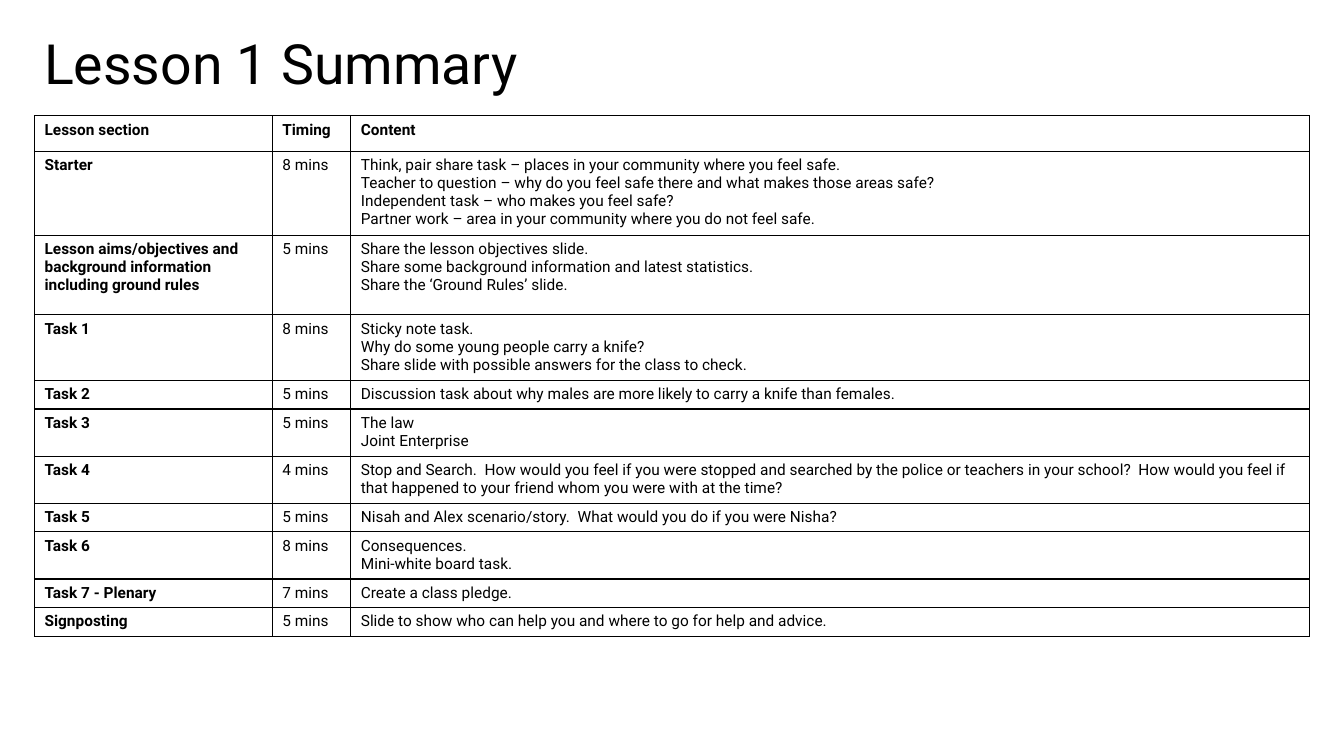
import pptx
import pptx.dml.color
import pptx.enum.text
import pptx.oxml
import pptx.oxml.ns
import pptx.util
from pptx.util import Cm

BLACK = pptx.dml.color.RGBColor(0, 0, 0)
WHITE = pptx.dml.color.RGBColor(255, 255, 255)
FONT = "Roboto"

COLUMN_WIDTHS = (Cm(5.99), Cm(1.98), Cm(24.16))
LINE_HEIGHT = 0.454
CELL_PADDING = 0.254

# Section, timing, content paragraphs, lines of text the row has room for
LESSON_ROWS = [
    ("Lesson section", "Timing", ["Content"], 1.4),
    ("Starter", "8 mins", [
        "Think, pair share task – places in your community where you feel safe.",
        "Teacher to question – why do you feel safe there and what makes those areas safe?",
        "Independent task – who makes you feel safe?",
        "Partner work – area in your community where you do not feel safe."], 4),
    ("Lesson aims/objectives and background information including ground rules", "5 mins", [
        "Share the lesson objectives slide.",
        "Share some background information and latest statistics.",
        "Share the ‘Ground Rules’ slide."], 3.86),
    ("Task 1", "8 mins", [
        "Sticky note task.",
        "Why do some young people carry a knife?",
        "Share slide with possible answers for the class to check."], 3),
    ("Task 2", "5 mins", [
        "Discussion task about why males are more likely to carry a knife than females."], 1),
    ("Task 3", "5 mins", ["The law", "Joint Enterprise"], 2),
    ("Task 4", "4 mins", [
        "Stop and Search.  How would you feel if you were stopped and searched by the police "
        "or teachers in your school?  How would you feel if that happened to your friend "
        "whom you were with at the time?"], 2),
    ("Task 5", "5 mins", [
        "Nisah and Alex scenario/story.  What would you do if you were Nisha?"], 1),
    ("Task 6", "8 mins", ["Consequences.", "Mini-white board task."], 2),
    ("Task 7 - Plenary", "7 mins", ["Create a class pledge."], 1),
    ("Signposting", "5 mins", [
        "Slide to show who can help you and where to go for help and advice."], 1),
]


def add_run(p, text, size, bold=False):
    r = p.add_run()
    r.text = text
    r.font.name = FONT
    r.font.size = pptx.util.Pt(size)
    r.font.bold = bold
    r.font.color.rgb = BLACK


def add_title(s, text):
    sp = s.shapes.add_textbox(Cm(0.86), Cm(0.71), Cm(12.5), Cm(1.91))
    sp.fill.solid()
    sp.fill.fore_color.rgb = WHITE
    tf = sp.text_frame
    tf.word_wrap = True
    tf.vertical_anchor = pptx.enum.text.MSO_ANCHOR.MIDDLE
    p = tf.paragraphs[0]
    p.line_spacing = 0.9
    add_run(p, text, 39.6)


def set_borders(cell):
    """Draw a 1 pt black line on all four sides of the cell."""
    tc_pr = cell._tc.get_or_add_tcPr()
    for i, side in enumerate(("lnL", "lnR", "lnT", "lnB")):
        tc_pr.insert(i, pptx.oxml.parse_xml(
            f'<a:{side} {pptx.oxml.ns.nsdecls("a")} w="{pptx.util.Pt(1)}">'
            f'<a:solidFill><a:srgbClr val="{BLACK}"/></a:solidFill></a:{side}>'))


def fill_cell(cell, lines, bold):
    cell.fill.background()
    set_borders(cell)
    tf = cell.text_frame
    for i, line in enumerate(lines):
        p = tf.add_paragraph() if i else tf.paragraphs[0]
        add_run(p, line, 11, bold)


def add_lesson_table(s):
    heights = [Cm(CELL_PADDING + LINE_HEIGHT * row[3]) for row in LESSON_ROWS]
    table = s.shapes.add_table(
        len(LESSON_ROWS), len(COLUMN_WIDTHS), Cm(0.87), Cm(2.92),
        sum(COLUMN_WIDTHS), sum(heights)).table
    table.first_row = False
    table.horz_banding = False
    for column, width in zip(table.columns, COLUMN_WIDTHS):
        column.width = width
    for i, (section, timing, content, _) in enumerate(LESSON_ROWS):
        table.rows[i].height = heights[i]
        for j, lines in enumerate(([section], [timing], content)):
            fill_cell(table.cell(i, j), lines, bold=i == 0 or j == 0)


def main():
    prs = pptx.Presentation()
    prs.slide_width = Cm(33.87)
    prs.slide_height = Cm(19.05)
    s = prs.slides.add_slide(prs.slide_layouts[6])
    add_title(s, "Lesson 1 Summary")
    add_lesson_table(s)
    prs.save("out.pptx")


if __name__ == "__main__":
    main()
